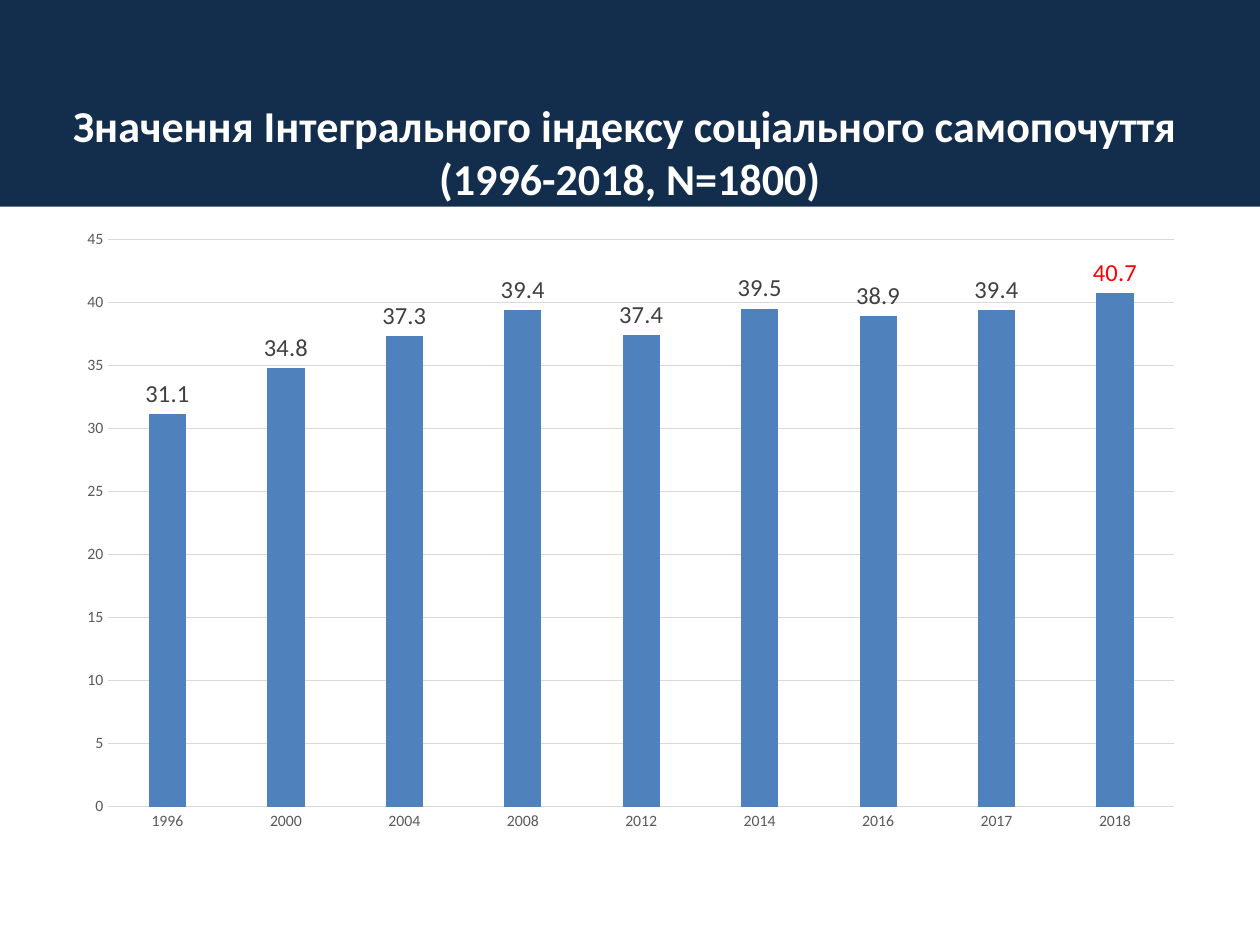
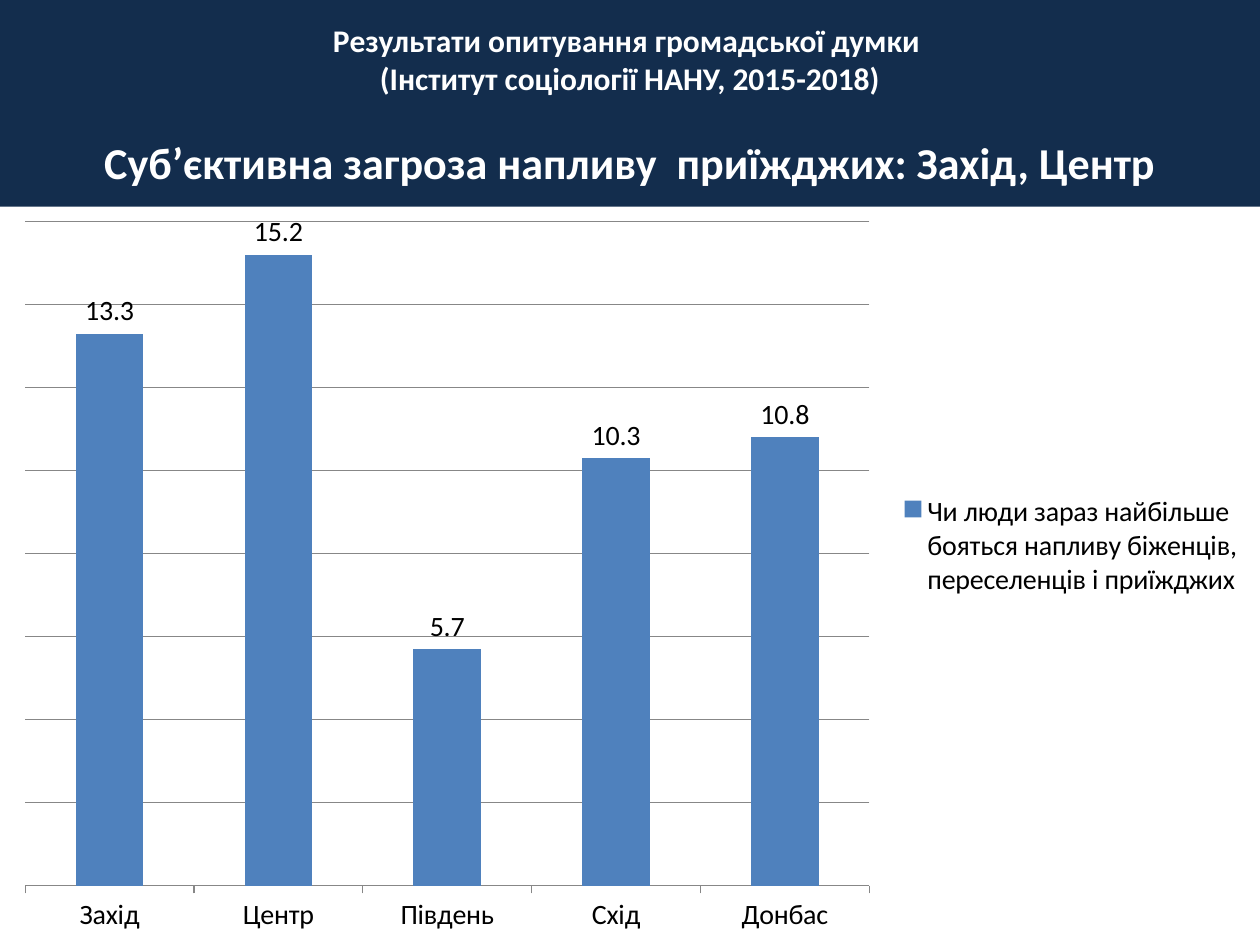
from lxml import etree
from pptx import Presentation
from pptx.chart import data as cd
from pptx.dml import color as col
from pptx.enum import chart as ch, shapes, text
from pptx.oxml import ns
from pptx.util import Inches, Pt

NAVY, BLUE, WHITE, BLACK = "132D4D", "4F81BD", "FFFFFF", "000000"
PALE, GRAY, DARK, STEEL, RED = "D9D9D9", "595959", "404040", "878787", "FF0000"
TICK = ch.XL_TICK_MARK


def rgb(code):
    """Turn a hex string into a colour."""
    return col.RGBColor.from_string(code)


def place(node, spot, box):
    """Set a manual layout (x, y, w, h as shares) at a child index of a chart node."""
    for old in node.findall(ns.qn("c:layout")):
        node.remove(old)
    lay = etree.Element(ns.qn("c:layout"))
    man = etree.SubElement(lay, ns.qn("c:manualLayout"))
    tags = [("xMode", "edge"), ("yMode", "edge"), *zip("xywh", box)]
    if node.tag == ns.qn("c:plotArea"):
        tags.insert(0, ("layoutTarget", "inner"))
    for tag, val in tags:
        etree.SubElement(man, ns.qn("c:" + tag)).set("val", str(val))
    node.insert(spot, lay)


class Deck:
    """Hold the shared style and the current slide."""

    face = "Calibri"

    def __init__(self):
        """Start an empty deck of 10 by 7.5 inches."""
        self.prs = Presentation()
        self.prs.slide_width, self.prs.slide_height = Inches(10), Inches(7.5)

    def page(self):
        """Add a blank slide and make it current."""
        self.slide = self.prs.slides.add_slide(self.prs.slide_layouts[6])

    def font(self, font, size, hue, bold=False):
        """Style one font."""
        font.name, font.size, font.bold = self.face, Pt(size), bold
        font.color.rgb = rgb(hue)

    def title(self, top, lines):
        """Draw the title band with lines of (text, size, space before)."""
        band = self.slide.shapes.add_shape(
            shapes.MSO_SHAPE.RECTANGLE, 0, 0, Inches(10), Inches(1.64))
        band.shadow.inherit = False
        band.fill.solid()
        band.fill.fore_color.rgb = rgb(NAVY)
        band.line.fill.background()
        frame = band.text_frame
        frame.word_wrap = True
        frame.vertical_anchor = text.MSO_ANCHOR.TOP
        frame.margin_top, frame.margin_bottom = Inches(top), 0
        for i, (words, size, gap) in enumerate(lines):
            para = frame.add_paragraph() if i else frame.paragraphs[0]
            para.alignment = text.PP_ALIGN.CENTER
            para.space_before = Pt(gap)
            run = para.add_run()
            run.text = words
            self.font(run.font, size, WHITE, True)

    def bars(self, box, plot, name, data, gap, lap, top, step, grid, label):
        """Add a column chart with value labels and return it."""
        info = cd.CategoryChartData(number_format="0.0")
        info.categories = list(data)
        info.add_series(name, list(data.values()))
        chart = self.slide.shapes.add_chart(
            ch.XL_CHART_TYPE.COLUMN_CLUSTERED, *map(Inches, box), info).chart
        self.font(chart.font, 10, BLACK)
        chart.has_title = chart.has_legend = False
        bars = chart.plots[0]
        bars.vary_by_categories = False
        bars.gap_width, bars.overlap = gap, lap
        fill = bars.series[0].format.fill
        fill.solid()
        fill.fore_color.rgb = rgb(BLUE)
        tags = bars.series[0].data_labels
        tags.show_value = True
        tags.position = ch.XL_LABEL_POSITION.OUTSIDE_END
        self.font(tags.font, *label)
        axis = chart.value_axis
        axis.minimum_scale, axis.maximum_scale, axis.major_unit = 0, top, step
        axis.major_tick_mark = TICK.NONE
        axis.tick_labels.number_format = "0"
        axis.tick_labels.number_format_is_linked = False
        axis.format.line.fill.background()
        for line in (axis.major_gridlines.format.line,
                     chart.category_axis.format.line):
            line.color.rgb = rgb(grid)
            line.width = Pt(0.75)
        place(chart._chartSpace.chart.plotArea, 0, plot)
        return chart

    def legend(self, chart, box, size):
        """Show the legend on the right."""
        chart.has_legend = True
        key = chart.legend
        key.position = ch.XL_LEGEND_POSITION.RIGHT
        key.include_in_layout = False
        self.font(key.font, size, BLACK)
        place(key._element, 1, box)


def index(deck):
    """Build the slide on the wellbeing index."""
    deck.page()
    deck.title(0.78, [
        ("Значення Інтегрального індексу соціального самопочуття ", 25.2, 0),
        ("(1996-2018, N=1800)", 25.2, 0)])
    data = {"1996": 31.1, "2000": 34.8, "2004": 37.3, "2008": 39.4, "2012": 37.4,
            "2014": 39.5, "2016": 38.9, "2017": 39.4, "2018": 40.7}
    chart = deck.bars((0.5, 1.75, 9, 4.95), (0.04, 0.03, 0.94, 0.91), "Series 1",
                      data, 219, -27, 45, 5, PALE, (14, DARK))
    for axis in (chart.category_axis, chart.value_axis):
        axis.major_tick_mark = TICK.NONE
        deck.font(axis.tick_labels.font, 9, GRAY)
    last = chart.plots[0].series[0].points[len(data) - 1].data_label
    deck.font(last.font, 14, RED)
    last.position = ch.XL_LABEL_POSITION.OUTSIDE_END


def threat(deck):
    """Build the slide on the perceived threat by region."""
    deck.page()
    deck.title(0.17, [
        ("Pезультати опитування громадської думки ", 18, 0),
        ("(Інститут соціології НАНУ, 2015-2018)", 18, 0),
        ("Суб’єктивна загроза напливу  приїжджих: Захід, Центр", 25.2, 22)])
    data = {"Захід": 13.3, "Центр": 15.2, "Південь": 5.7, "Схід": 10.3, "Донбас": 10.8}
    name = "Чи люди зараз найбільше бояться напливу біженців, переселенців і приїжджих"
    chart = deck.bars((0, 1.64, 10, 5.86), (0.02, 0.02, 0.67, 0.9), name,
                      data, 150, 0, 16, 2, STEEL, (16, BLACK))
    chart.value_axis.visible = False
    chart.category_axis.major_tick_mark = TICK.OUTSIDE
    deck.font(chart.category_axis.tick_labels.font, 16, BLACK)
    deck.legend(chart, (0.71, 0.38, 0.28, 0.16), 16)


def main():
    """Build and save the deck."""
    deck = Deck()
    index(deck)
    threat(deck)
    deck.prs.save("out.pptx")


if __name__ == "__main__":
    main()
